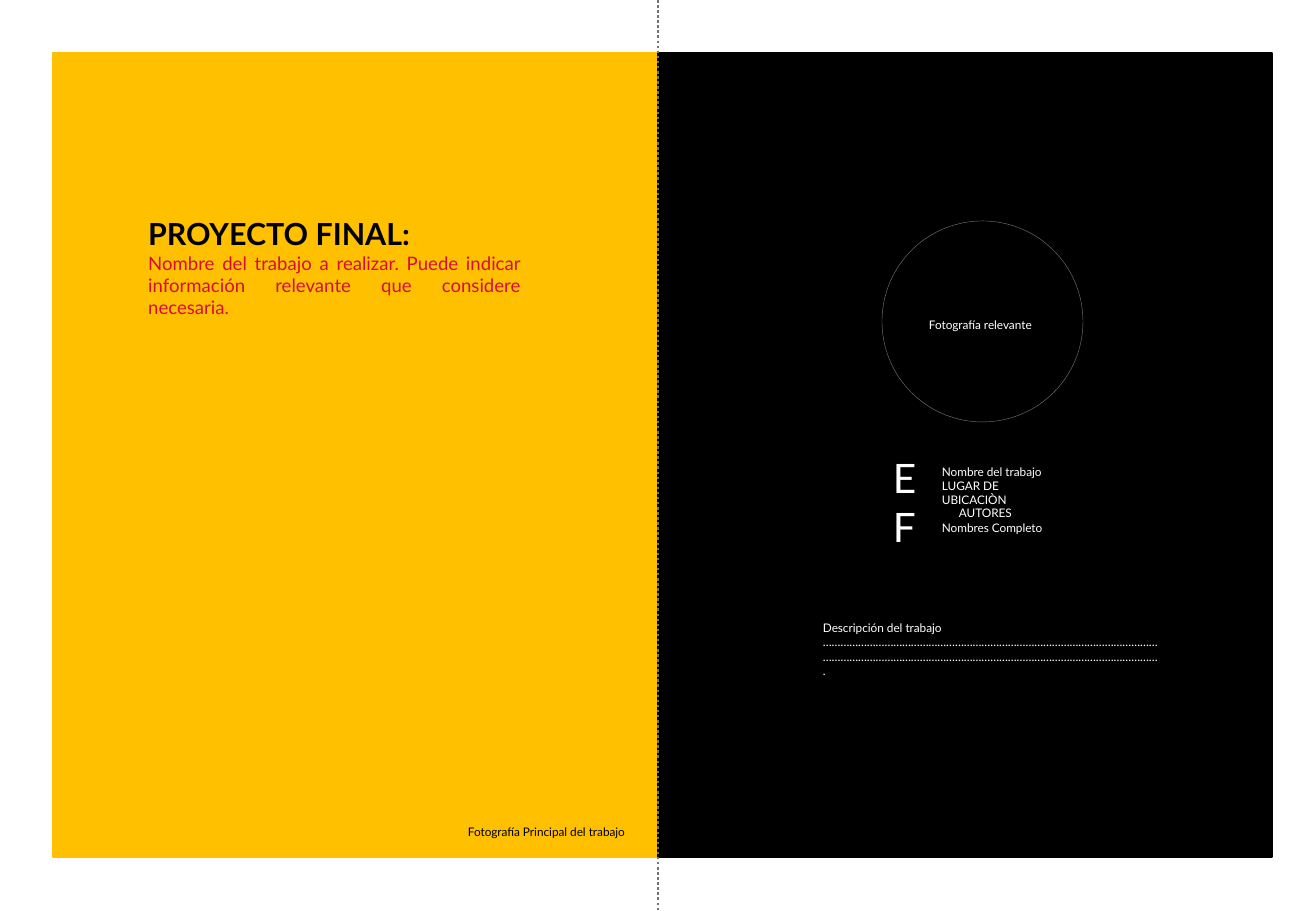
import pptx
import pptx.util
from lxml import etree
from pptx.dml.color import RGBColor
from pptx.enum.dml import MSO_LINE
from pptx.enum.shapes import MSO_CONNECTOR, MSO_SHAPE
from pptx.enum.text import MSO_ANCHOR, MSO_AUTO_SIZE, PP_ALIGN
from pptx.oxml.ns import qn

GOLD = RGBColor(0xFF, 0xC0, 0x00)
BLACK = RGBColor(0, 0, 0)
WHITE = RGBColor(0xFF, 0xFF, 0xFF)
GREY = RGBColor(0x76, 0x71, 0x71)
RED = RGBColor(0xD6, 0x0C, 0x3A)

FONT = "Lato"
WIDE, HIGH, FOLD = 1316, 911, 658
SCALE = 914400 / 121.5

# shape, box, fill, line colour, line width
SHAPES = [
    (MSO_SHAPE.RECTANGLE, (53, 53, 604, 804), GOLD, GOLD, 1),
    (MSO_SHAPE.RECTANGLE, (FOLD, 53, 614, 804), BLACK, BLACK, 1),
    (MSO_SHAPE.OVAL, (882, 221, 201, 201), None, GREY, 0.25),
]

# text, box, size, colour
LABELS = [
    ("Fotografía relevante", (917, 312, 132, 27), 7, WHITE),
    ("EF", (881, 447, 66, 61), 24, WHITE),
    ("Nombre del trabajo", (930, 459, 129, 27), 7, WHITE),
    ("LUGAR DE UBICACIÒN", (930, 473, 143, 27), 7, WHITE),
    ("AUTORES", (947, 500, 84, 27), 7, WHITE),
    ("Nombres Completo", (930, 515, 132, 27), 7, WHITE),
    ("Descripción del trabajo ………………………………………………………………………………………………………………………………………………………………………………………………………….",
     (811, 615, 360, 55), 7, WHITE),
    ("Fotografía Principal del trabajo", (456, 819, 188, 27), 7, BLACK),
]

# text, size, colour, bold, alignment
TITLE = [
    ("PROYECTO FINAL:", 18, BLACK, True, PP_ALIGN.LEFT),
    ("Nombre del trabajo a realizar. Puede indicar información relevante "
     "que considere necesaria.", 11, RED, False, PP_ALIGN.JUSTIFY),
]
TITLE_BOX = (136, 209, 397, 117)


def px(*sizes):
    return [round(size * SCALE) for size in sizes]


def style(para, size, color, bold=False):
    para.font.name = FONT
    para.font.size = pptx.util.Pt(size)
    para.font.color.rgb = color
    para.font.bold = bold


def add_shape(slide, kind, box, fill, color, width):
    shape = slide.shapes.add_shape(kind, *px(*box))
    shape.shadow.inherit = False
    if fill is None:
        shape.fill.background()
    else:
        shape.fill.solid()
        shape.fill.fore_color.rgb = fill
    shape.line.color.rgb = color
    shape.line.width = pptx.util.Pt(width)


def add_fold(slide):
    fold = slide.shapes.add_connector(
        MSO_CONNECTOR.STRAIGHT, *px(FOLD, 0, FOLD, HIGH))
    fold.line.color.rgb = GREY
    fold.line.width = pptx.util.Pt(1.5)
    fold.line.dash_style = MSO_LINE.ROUND_DOT
    etree.SubElement(fold.element.spPr, qn("a:effectLst"))


def add_label(slide, text, box, size, color):
    frame = slide.shapes.add_textbox(*px(*box)).text_frame
    frame.word_wrap = True
    frame.auto_size = MSO_AUTO_SIZE.SHAPE_TO_FIT_TEXT
    frame.text = text
    style(frame.paragraphs[0], size, color)


def set_title(slide):
    """Fill the title and bring it in front of the panels."""
    title = slide.shapes.title
    title.left, title.top, title.width, title.height = px(*TITLE_BOX)
    frame = title.text_frame
    frame.word_wrap = True
    frame.auto_size = MSO_AUTO_SIZE.NONE
    frame.vertical_anchor = MSO_ANCHOR.TOP
    frame.text = "\n".join(row[0] for row in TITLE)
    for para, (_, size, color, bold, align) in zip(frame.paragraphs, TITLE):
        style(para, size, color, bold)
        para.alignment = align
    title.element.getparent().append(title.element)


def main():
    deck = pptx.Presentation()
    deck.slide_width, deck.slide_height = px(WIDE, HIGH)
    slide = deck.slides.add_slide(deck.slide_layouts[5])
    for row in SHAPES[:2]:
        add_shape(slide, *row)
    add_fold(slide)
    add_shape(slide, *SHAPES[2])
    for row in LABELS:
        add_label(slide, *row)
    set_title(slide)
    deck.save("out.pptx")


if __name__ == "__main__":
    main()
